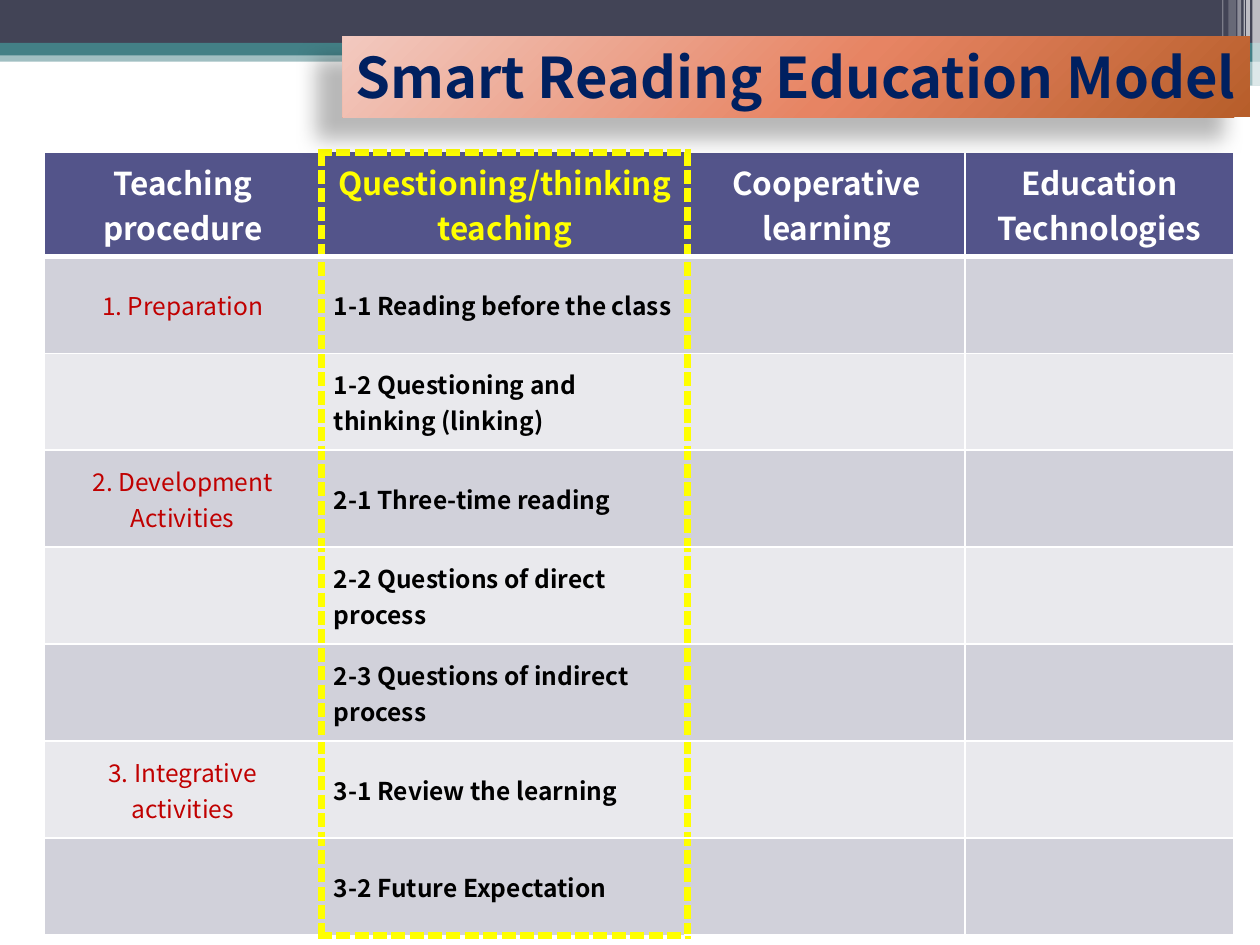
from lxml import etree
from pptx import Presentation
from pptx.dml.color import RGBColor
from pptx.enum.shapes import MSO_SHAPE
from pptx.enum.text import MSO_ANCHOR, MSO_AUTO_SIZE, PP_ALIGN
from pptx.oxml import parse_xml
from pptx.oxml.ns import qn
from pptx.util import Inches, Pt

RECT, ROUND = MSO_SHAPE.RECTANGLE, MSO_SHAPE.ROUNDED_RECTANGLE
LEFT, CENTER, MIDDLE = PP_ALIGN.LEFT, PP_ALIGN.CENTER, MSO_ANCHOR.MIDDLE
FIT = MSO_AUTO_SIZE.SHAPE_TO_FIT_TEXT
FONT = "Noto Sans CJK SC"
NS = 'xmlns:a="http://schemas.openxmlformats.org/drawingml/2006/main"'
WHITE, YELLOW, RED, TEAL = "FFFFFF", "FFFF00", "C00000", "438086"

# left, top, width, height, colour, opacity in percent
BANDS = [
    (0, 0.4, 10, 0.09, TEAL, 50),
    (0, 0, 10, 0.34, "424456", 100),
    (0, 0.34, 10, 0.1, TEAL, 100),
    (5.92, 0.39, 4.08, 0.1, TEAL, 100),
    (5.92, 0.48, 4.08, 0.2, TEAL, 50),
]
PILLS = [
    (5.91, 0.54, 3.35, 0.03, WHITE, 100),
    (8.06, 0.64, 1.75, 0.04, WHITE, 100),
]
STRIPES = [
    (9.94, 0, 0.06, 0.68, WHITE, 65),
    (9.89, 0, 0.03, 0.68, WHITE, 65),
    (9.87, 0, 0.01, 0.68, WHITE, 60),
    (9.82, 0, 0.03, 0.68, WHITE, 40),
    (9.75, 0, 0.06, 0.64, WHITE, 20),
    (9.7, 0, 0.01, 0.64, WHITE, 30),
]
TITLE = "Smart Reading Education Model"
STOPS = [(0, "F2C9BF"), (55, "E78463"), (100, "B75E2A")]
HEADS = ["Teaching procedure", "Questioning/thinking teaching",
         "Cooperative learning", "Education Technologies"]
STEPS = [
    ("1. Preparation", "1-1 Reading before the class"),
    ("", "1-2 Questioning and thinking (linking)"),
    ("2. Development Activities", "2-1 Three-time reading"),
    ("", "2-2 Questions of direct process"),
    ("", "2-3 Questions of indirect process"),
    ("3. Integrative activities", "3-1 Review the learning"),
    ("", "3-2 Future Expectation"),
]
WIDTHS = [2.2, 2.91, 2.2, 2.13]
ROW = 0.77
FOCUS = 1  # the column framed in yellow
THIN, THICK, DASH = (WHITE, 1, "solid"), (WHITE, 3, "solid"), (YELLOW, 4.5, "lgDash")


def rgb(code):
    return RGBColor.from_string(code)


def write(frame, text, size=14, color="000000", bold=False, align=LEFT):
    para = frame.paragraphs[0]
    para.alignment = align
    run = para.add_run()
    run.text = text
    font = run.font
    font.name, font.size, font.bold = FONT, Pt(size), bold
    font.color.rgb = rgb(color)


def add_block(slide, kind, left, top, width, height, color, alpha):
    block = slide.shapes.add_shape(
        kind, Inches(left), Inches(top), Inches(width), Inches(height))
    block.shadow.inherit = False
    block.line.fill.background()
    block.fill.solid()
    block.fill.fore_color.rgb = rgb(color)
    if alpha < 100:
        tint = block.fill._xPr.find(".//" + qn("a:srgbClr"))
        etree.SubElement(tint, qn("a:alpha"), val=str(alpha * 1000))
    return block


def add_title(slide):
    box = slide.shapes.add_textbox(Inches(2.72), Inches(0.29), Inches(7.2), Inches(0.64))
    box.text_frame.word_wrap = False
    box.text_frame.auto_size = FIT
    write(box.text_frame, TITLE, size=32, color="002060", bold=True)
    stops = "".join(f'<a:gs pos="{pos * 1000}"><a:srgbClr val="{color}"/></a:gs>'
                    for pos, color in STOPS)
    props = box.fill._xPr
    props.remove(props.find(qn("a:noFill")))
    props.append(parse_xml(
        f'<a:gradFill {NS} rotWithShape="1"><a:gsLst>{stops}</a:gsLst><a:path path="circle">'
        '<a:fillToRect l="-40000" t="-90000" r="140000" b="190000"/></a:path></a:gradFill>'))
    props.append(parse_xml(
        f'<a:effectLst {NS}><a:outerShdw blurRad="{Pt(11.8)}" dist="{Pt(19.7)}" '
        f'dir="{141 * 60000}" algn="ctr" rotWithShape="0"><a:srgbClr val="000000">'
        '<a:alpha val="28000"/></a:srgbClr></a:outerShdw></a:effectLst>'))


def edges(row, col):
    """Left, right, top and bottom border of a cell."""
    left = DASH if col in (FOCUS, FOCUS + 1) else THIN
    right = DASH if col in (FOCUS - 1, FOCUS) else THIN
    top = THICK if row == 1 else THIN
    bottom = THICK if row == 0 else THIN
    if col == FOCUS:
        top = DASH if row == 0 else top
        bottom = DASH if row == len(STEPS) else bottom
    return zip("LRTB", (left, right, top, bottom))


def set_edges(cell, row, col):
    props = cell._tc.get_or_add_tcPr()
    for spot, (side, (color, width, dash)) in enumerate(edges(row, col)):
        props.insert(spot, parse_xml(
            f'<a:ln{side} {NS} w="{Pt(width)}"><a:solidFill><a:srgbClr val="{color}"/>'
            f'</a:solidFill><a:prstDash val="{dash}"/></a:ln{side}>'))


def add_grid(slide):
    count = len(STEPS) + 1
    table = slide.shapes.add_table(
        count, len(WIDTHS), Inches(0.35), Inches(1.21),
        Inches(sum(WIDTHS)), Inches(ROW * count)).table
    for col, width in enumerate(WIDTHS):
        table.columns[col].width = Inches(width)
    for row, texts in enumerate([HEADS] + [step + ("", "") for step in STEPS]):
        table.rows[row].height = Inches(ROW)
        for col, text in enumerate(texts):
            cell = table.cell(row, col)
            cell.vertical_anchor = MIDDLE
            cell.fill.solid()
            shade = "53548A" if row == 0 else ("E9E9ED", "D1D1DA")[row % 2]
            cell.fill.fore_color.rgb = rgb(shade)
            set_edges(cell, row, col)
            if not text:
                continue
            if row == 0:
                look = dict(size=18, color=YELLOW if col == FOCUS else WHITE,
                            bold=True, align=CENTER)
            elif col == FOCUS:
                look = dict(bold=True)
            else:
                look = dict(color=RED, align=CENTER)
            write(cell.text_frame, text, **look)


def main():
    deck = Presentation()
    deck.slide_width, deck.slide_height = Inches(10), Inches(7.5)
    slide = deck.slides.add_slide(deck.slide_layouts[6])
    for kind, parts in ((RECT, BANDS), (ROUND, PILLS), (RECT, STRIPES)):
        for part in parts:
            add_block(slide, kind, *part)
    add_grid(slide)
    add_title(slide)
    deck.save("out.pptx")


if __name__ == "__main__":
    main()
